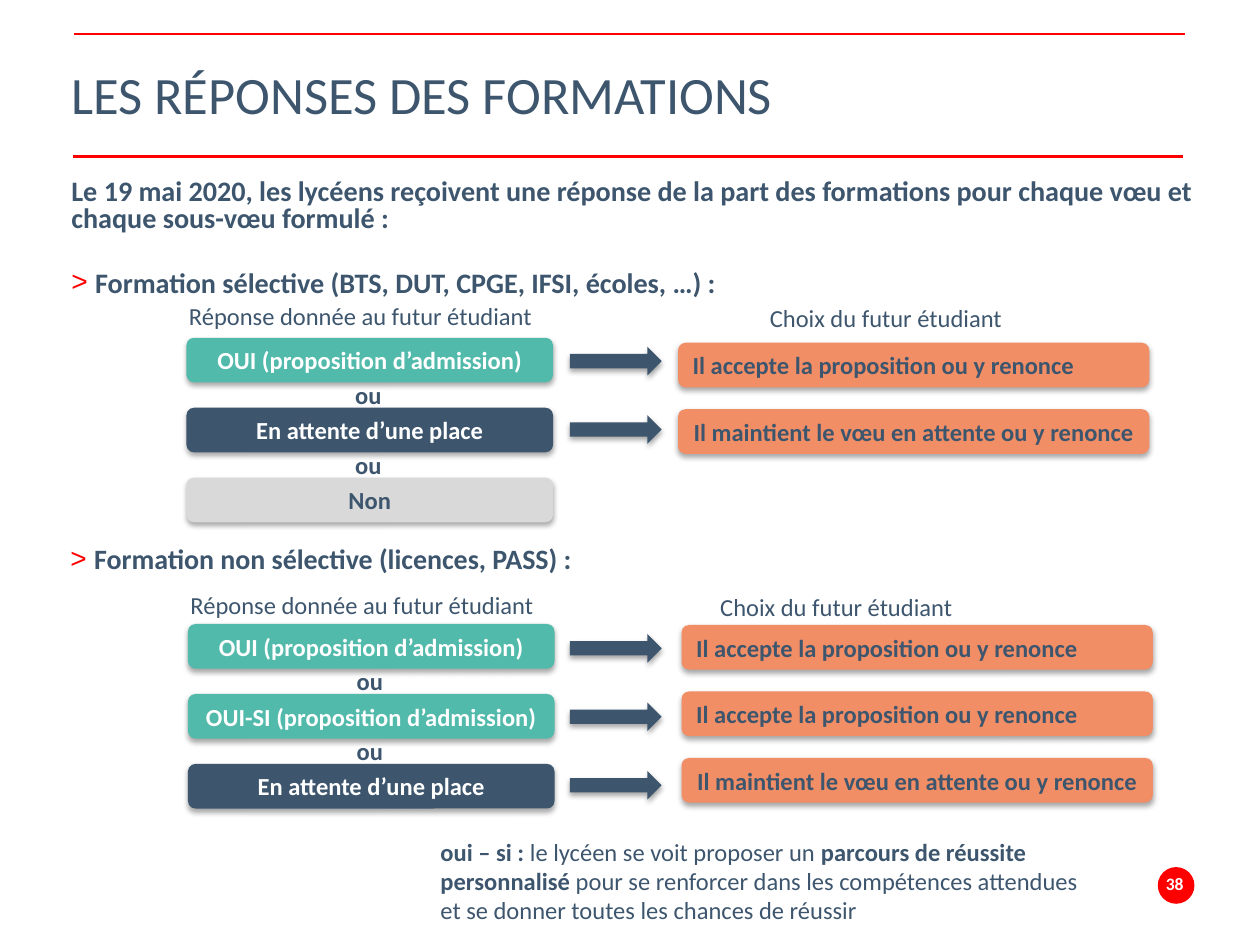
"""Build the slide on the answers that courses give to applicants."""
from lxml import etree
from pptx import Presentation
from pptx import util as u
from pptx.dml.color import RGBColor
from pptx.enum import shapes, text
from pptx.oxml.ns import qn

COLOURS = {"navy": "3D566E", "red": "FF0000", "green": "51BAAA",
           "orange": "F28E65", "grey": "D9D9D9", "white": "FFFFFF"}
FONT = "Calibri"
LEFT, CENTRE = text.PP_ALIGN.LEFT, text.PP_ALIGN.CENTER
SHAPE = shapes.MSO_SHAPE

ANSWER_PITCH, CHOICE_PITCH, ARROW_PITCH = 1.41, 1.34, 1.38
YES = ("OUI (proposition d’admission)", "green", "white")
YES_IF = ("OUI-SI (proposition d’admission)", "green", "white")
WAITING = ("En attente d’une place", "navy", "white")
NO = ("Non", "grey", "navy")
ACCEPT = ("Il accepte la proposition ou y renonce", LEFT)
KEEP = ("Il maintient le vœu en attente ou y renonce", CENTRE)

SECTIONS = [
    {"answer_left": 3.76, "answer_top": 6.81, "answers": [YES, WAITING, NO],
     "choice_left": 13.67, "choice_top": 6.91, "choices": [ACCEPT, KEEP],
     "arrow_top": 6.99, "label_top": 5.94, "choice_label_left": 15.27},
    {"answer_left": 3.79, "answer_top": 12.58, "answers": [YES, YES_IF, WAITING],
     "choice_left": 13.74, "choice_top": 12.6, "choices": [ACCEPT, ACCEPT, KEEP],
     "arrow_top": 12.78, "label_top": 11.76, "choice_label_left": 14.27},
]


def colour(name):
    return RGBColor.from_string(COLOURS[name])


def place(*lengths):
    return [u.Cm(length) for length in lengths]


def style(para, size=14, ink="navy", bold=False, align=LEFT):
    para.alignment = align
    para.font.name = FONT
    para.font.size = u.Pt(size)
    para.font.bold = bold
    para.font.color.rgb = colour(ink)


def add_bullet(para):
    """Give the paragraph a red > with a hanging indent."""
    props = para._p.get_or_add_pPr()
    props.set("marL", str(u.Cm(0.48)))
    props.set("indent", str(-u.Cm(0.48)))
    tint = etree.SubElement(props, qn("a:buClr"))
    etree.SubElement(tint, qn("a:srgbClr"), val=COLOURS["red"])
    etree.SubElement(props, qn("a:buFont"), typeface="Arial")
    etree.SubElement(props, qn("a:buChar"), char=">")


def add_text(page, box, words, anchor=text.MSO_ANCHOR.TOP, **look):
    """Add a wrapping text box and return its first paragraph."""
    frame = page.shapes.add_textbox(*place(*box)).text_frame
    frame.word_wrap = True
    frame.vertical_anchor = anchor
    para = frame.paragraphs[0]
    para.text = words
    style(para, **look)
    return para


def add_rule(page, left, top):
    line = page.shapes.add_connector(
        shapes.MSO_CONNECTOR.STRAIGHT, *place(left, top, left + 22.38, top))
    line.line.color.rgb = colour("red")
    line.line.width = u.Pt(1.5)
    etree.SubElement(line._element.spPr, qn("a:effectLst"))


def add_plain_shape(page, kind, box, fill):
    shape = page.shapes.add_shape(kind, *place(*box))
    shape.shadow.inherit = False
    shape.fill.solid()
    shape.fill.fore_color.rgb = colour(fill)
    shape.line.fill.background()
    return shape


def add_raised_shape(page, kind, box, fill):
    """Add a shape with a soft shadow below it."""
    shape = add_plain_shape(page, kind, box, fill)
    effects = shape._element.spPr.find(qn("a:effectLst"))
    shadow = etree.SubElement(effects, qn("a:outerShdw"), blurRad=str(u.Pt(3.1)),
                              dist=str(u.Pt(1.8)), dir="5400000", rotWithShape="0")
    tint = etree.SubElement(shadow, qn("a:srgbClr"), val="000000")
    etree.SubElement(tint, qn("a:alpha"), val="35000")
    return shape


def add_card(page, box, words, fill, ink, align):
    card = add_raised_shape(page, SHAPE.ROUNDED_RECTANGLE, box, fill)
    card.text_frame.word_wrap = True
    card.text_frame.vertical_anchor = text.MSO_ANCHOR.MIDDLE
    para = card.text_frame.paragraphs[0]
    para.text = words
    style(para, ink=ink, bold=True, align=align)


def add_section(page, section):
    """Add the answers, the arrows and the choices of one kind of course."""
    left, label_top = section["answer_left"], section["label_top"]
    add_text(page, (left - 0.2, label_top, 7.8, 0.86), "Réponse donnée au futur étudiant")
    add_text(page, (section["choice_label_left"], label_top + 0.05, 6.1, 0.86),
             "Choix du futur étudiant")
    for row, (words, fill, ink) in enumerate(section["answers"]):
        top = section["answer_top"] + row * ANSWER_PITCH
        add_card(page, (left, top, 7.39, 0.9), words, fill, ink, CENTRE)
        if row < len(section["answers"]) - 1:
            add_text(page, (left + 3.15, top + 0.73, 1.96, 0.86), "ou", bold=True)
    for row, (words, align) in enumerate(section["choices"]):
        arrow_top = section["arrow_top"] + row * ARROW_PITCH
        add_raised_shape(page, SHAPE.RIGHT_ARROW, (11.49, arrow_top, 1.85, 0.58), "navy")
        top = section["choice_top"] + row * CHOICE_PITCH
        add_card(page, (section["choice_left"], top, 9.5, 0.9), words, "orange", "navy", align)


def add_introduction(page):
    """Add the opening sentence and the first section heading."""
    opening = add_text(
        page, (1.19, 3.51, 23.8, 2.74),
        "Le 19 mai 2020, les lycéens reçoivent une réponse de la part des formations "
        "pour chaque vœu et chaque sous-vœu formulé :", size=16.1, bold=True)
    opening.line_spacing = 0.8
    heading = opening._parent.add_paragraph()
    heading.text = "Formation sélective (BTS, DUT, CPGE, IFSI, écoles, …) :"
    add_bullet(heading)
    heading.line_spacing = 0.8
    heading.space_before = u.Pt(21.4)
    style(heading, size=16.1, bold=True)


def add_second_heading(page):
    para = page.shapes.add_textbox(*place(1.17, 10.8, 22.66, 1.35)).text_frame.paragraphs[0]
    para.text = "Formation non sélective (licences, PASS) :"
    add_bullet(para)
    style(para, size=16, bold=True)


def add_note(page):
    """Add the explanation of the conditional yes."""
    para = add_text(page, (6.88, 16.74, 15.5, 2.06), "")
    para._p.get_or_add_pPr().set("marL", str(u.Cm(1.75)))
    for words, bold in [
            ("oui – si : ", True),
            ("le lycéen se voit proposer un ", False),
            ("parcours de réussite personnalisé ", True),
            ("pour se renforcer dans les compétences attendues et se donner "
             "toutes les chances de réussir", False)]:
        span = para.add_run()
        span.text = words
        span.font.bold = bold


def main():
    deck = Presentation()
    deck.slide_width, deck.slide_height = place(25.4, 19.05)
    page = deck.slides.add_slide(deck.slide_layouts[6])
    middle = text.MSO_ANCHOR.MIDDLE
    add_rule(page, 1.47, 3.15)
    add_rule(page, 1.5, 0.69)
    title = add_text(page, (1.19, 0.23, 22.66, 3.58), "LES RÉPONSES DES FORMATIONS",
                     anchor=middle, size=30)
    title.line_spacing = u.Pt(28)
    add_introduction(page)
    add_second_heading(page)
    for section in SECTIONS:
        add_section(page, section)
    add_note(page)
    add_plain_shape(page, SHAPE.OVAL, (23.34, 17.48, 0.74, 0.74), "red")
    add_text(page, (23.16, 17.45, 1.04, 0.74), "38", anchor=middle,
             size=10, ink="white", bold=True, align=CENTRE)
    deck.save("out.pptx")


if __name__ == "__main__":
    main()
